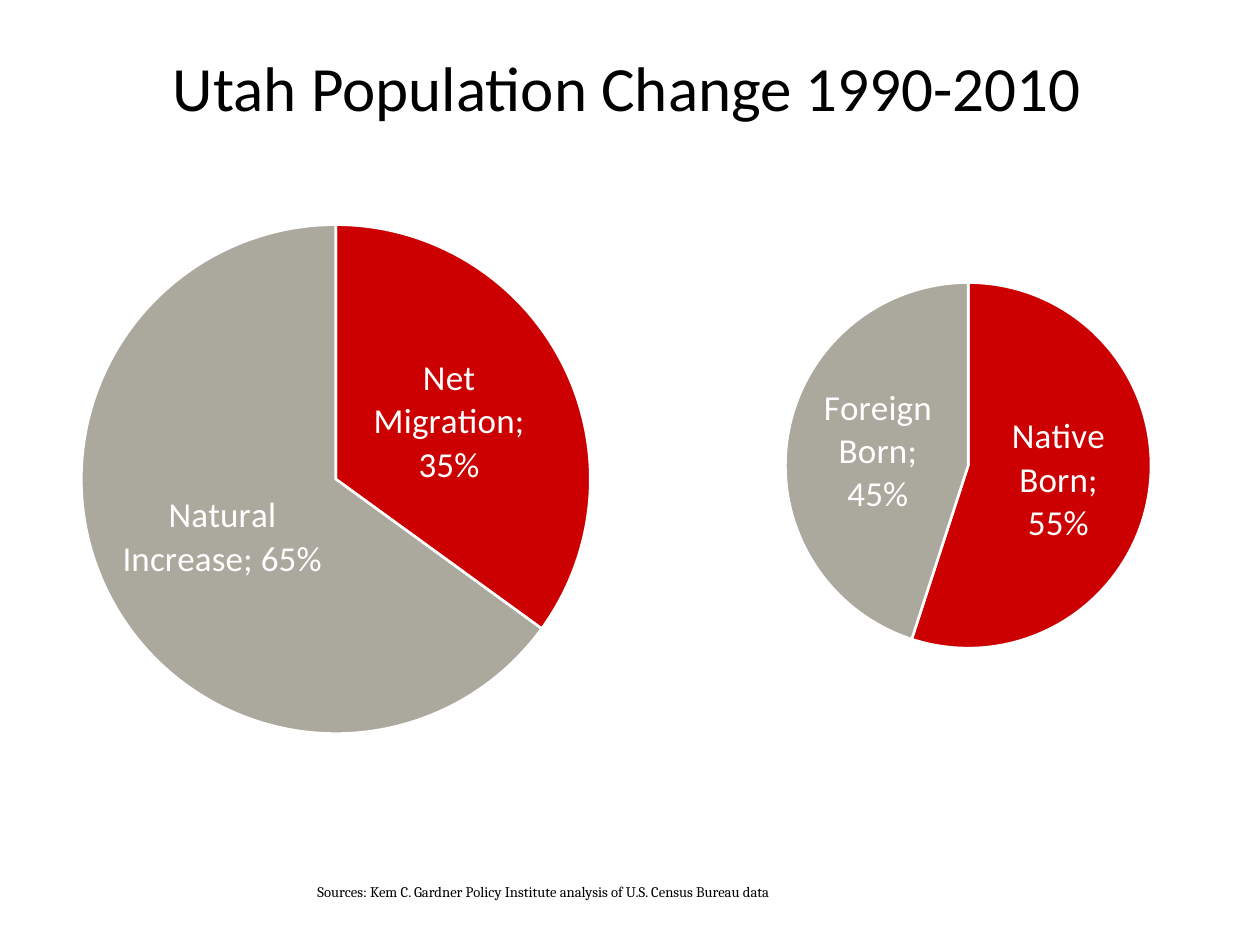
import pptx
import pptx.chart.data
import pptx.dml.color
import pptx.enum.chart
import pptx.enum.text
import pptx.oxml
import pptx.oxml.ns
import pptx.util

Pt = pptx.util.Pt
RED = pptx.dml.color.RGBColor(0xCC, 0x00, 0x00)
GRAY = pptx.dml.color.RGBColor(0xAB, 0xA8, 0x9E)
WHITE = pptx.dml.color.RGBColor(0xFF, 0xFF, 0xFF)
BLACK = pptx.dml.color.RGBColor(0x00, 0x00, 0x00)


def format_font(font, name, size, color):
    for attribute, value in {"name": name, "size": Pt(size)}.items():
        setattr(font, attribute, value)
    font.color.rgb = color


def format_frame(frame, **values):
    for attribute, value in values.items():
        setattr(frame, attribute, value)


def add_title(slide, text, box):
    title = slide.shapes.title
    title.left, title.top, title.width, title.height = map(Pt, box)
    format_frame(title.text_frame, text=text, word_wrap=True,
                 vertical_anchor=pptx.enum.text.MSO_ANCHOR.TOP,
                 auto_size=pptx.enum.text.MSO_AUTO_SIZE.NONE)
    paragraph = title.text_frame.paragraphs[0]
    paragraph.alignment = pptx.enum.text.PP_ALIGN.CENTER
    paragraph.line_spacing = 0.9
    format_font(paragraph.font, "Calibri", 36, BLACK)


def add_source_note(slide, text, box):
    note = slide.shapes.add_textbox(*map(Pt, box))
    format_frame(note.text_frame, text=text, word_wrap=True,
                 vertical_anchor=pptx.enum.text.MSO_ANCHOR.MIDDLE,
                 margin_left=0, margin_top=0, margin_right=0, margin_bottom=0)
    paragraph = note.text_frame.paragraphs[0]
    paragraph.alignment = pptx.enum.text.PP_ALIGN.RIGHT
    format_font(paragraph.font, "Cambria", 8.4, BLACK)


def set_plot_layout(chart, fractions):
    """Place the pie at x, y, w, h, given as fractions of the chart frame."""
    plot_area = chart.plots[0]._element.getparent()
    for old_layout in plot_area.findall(pptx.oxml.ns.qn("c:layout")):
        plot_area.remove(old_layout)
    values = "".join(f'<c:{key} val="{value}"/>' for key, value in zip("xywh", fractions))
    plot_area.insert(0, pptx.oxml.parse_xml(
        f'<c:layout {pptx.oxml.ns.nsdecls("c")}><c:manualLayout>'
        '<c:layoutTarget val="inner"/><c:xMode val="edge"/><c:yMode val="edge"/>'
        f'{values}</c:manualLayout></c:layout>'))


def format_labels(plot):
    plot.has_data_labels = True
    labels = plot.data_labels
    settings = {
        "show_value": True,
        "show_category_name": True,
        "show_percentage": False,
        "number_format": "0%",
        "number_format_is_linked": False,
        "position": pptx.enum.chart.XL_LABEL_POSITION.CENTER,
    }
    for attribute, value in settings.items():
        setattr(labels, attribute, value)
    format_font(labels.font, "Calibri", 20, WHITE)
    separator = pptx.oxml.parse_xml(
        f'<c:separator {pptx.oxml.ns.nsdecls("c")}>; </c:separator>')
    element = labels._element
    following = element.find(pptx.oxml.ns.qn("c:showLeaderLines"))
    if following is None:
        element.append(separator)
    else:
        following.addprevious(separator)


def add_pie(slide, shares, box, plot_fractions):
    data = pptx.chart.data.CategoryChartData(number_format="0%")
    data.categories = list(shares)
    data.add_series("Series 1", list(shares.values()))
    chart = slide.shapes.add_chart(
        pptx.enum.chart.XL_CHART_TYPE.PIE, *map(Pt, box), data).chart
    chart.has_title = False
    chart.has_legend = False
    format_font(chart.font, "Calibri", 20, WHITE)
    plot = chart.plots[0]
    plot.vary_by_categories = True
    for index, color in enumerate((RED, GRAY)):
        point_format = plot.series[0].points[index].format
        point_format.fill.solid()
        point_format.fill.fore_color.rgb = color
        point_format.line.color.rgb = WHITE
        point_format.line.width = Pt(1.5)
    format_labels(plot)
    set_plot_layout(chart, plot_fractions)


def main():
    presentation = pptx.Presentation()
    presentation.slide_width, presentation.slide_height = Pt(720), Pt(540)
    slide = presentation.slides.add_slide(presentation.slide_layouts[5])
    add_title(slide, "Utah Population Change 1990-2010", (18.7, 28.8, 679, 59))
    add_source_note(
        slide,
        "Sources: Kem C. Gardner Policy Institute analysis of U.S. Census Bureau data",
        (135.4, 500.4, 304.6, 18))
    add_pie(slide, {"Net Migration": 0.35, "Natural Increase": 0.65},
            (0, 118.8, 383.8, 319.7), (0.12, 0.03, 0.76, 0.91))
    add_pie(slide, {"Native Born": 0.55, "Foreign Born": 0.45},
            (408.2, 138.2, 290.2, 255.6), (0.14, 0.09, 0.72, 0.82))
    presentation.save("out.pptx")


if __name__ == "__main__":
    main()
